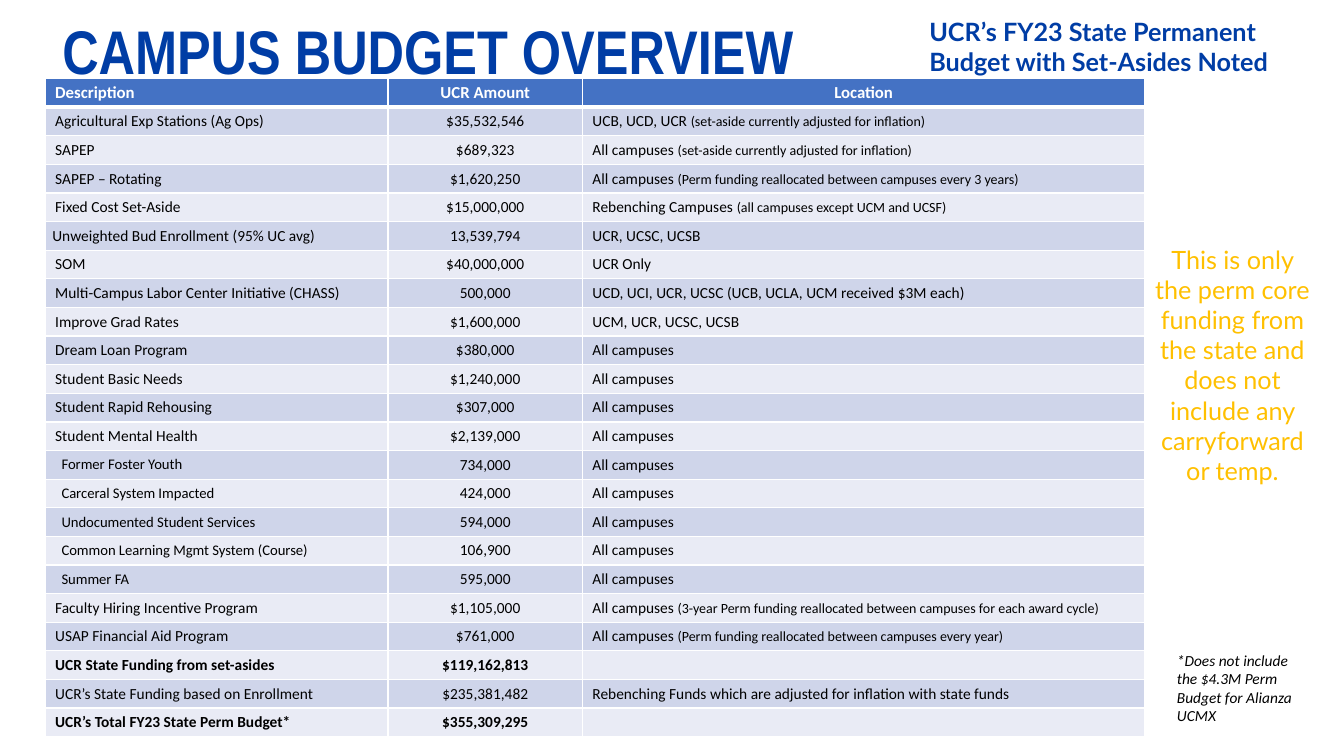
from dataclasses import dataclass

from lxml.etree import SubElement
from pptx import Presentation
from pptx.dml.color import RGBColor
from pptx.enum.text import MSO_ANCHOR, PP_ALIGN
from pptx.oxml.ns import qn
from pptx.util import Cm, Pt


@dataclass(frozen=True)
class Theme:
    """Colours, fonts and type sizes of the slide."""
    blue: str = "003DA5"
    gold: str = "FFC000"
    black: str = "000000"
    white: str = "FFFFFF"
    header: str = "4472C4"
    bands: tuple = ("CFD5EA", "E9EBF5")
    title_font: str = "Arial Narrow"
    accent_font: str = "Lato"
    body_font: str = "Calibri"
    title_size: float = 44
    accent_size: float = 18
    header_size: float = 12
    body_size: float = 11
    detail_size: float = 10.5
    remark_size: float = 10


THEME = Theme()
INDENT, SLIGHT_INDENT, DETAIL_INDENT = 0.25, 0.18, 0.41
COLUMN_WIDTHS = (8.64, 4.9, 14.17)
HEADINGS = ("Description", "UCR Amount", "Location")
ALL = "All campuses"
TOTALS = ("UCR State Funding from set-asides", "UCR’s Total FY23 State Perm Budget*")
SLIGHT = ("Unweighted Bud Enrollment (95% UC avg)",)
DETAILS = (
    "Former Foster Youth",
    "Carceral System Impacted",
    "Undocumented Student Services",
    "Common Learning Mgmt System (Course)",
    "Summer FA",
)
BUDGET = (
    ("Agricultural Exp Stations (Ag Ops)", "$35,532,546", "UCB, UCD, UCR",
     "(set-aside currently adjusted for inflation)"),
    ("SAPEP", "$689,323", ALL, "(set-aside currently adjusted for inflation)"),
    ("SAPEP – Rotating", "$1,620,250", ALL,
     "(Perm funding reallocated between campuses every 3 years)"),
    ("Fixed Cost Set-Aside", "$15,000,000", "Rebenching Campuses",
     "(all campuses except UCM and UCSF)"),
    (SLIGHT[0], "13,539,794", "UCR, UCSC, UCSB", ""),
    ("SOM", "$40,000,000", "UCR Only", ""),
    ("Multi-Campus Labor Center Initiative (CHASS)", "500,000",
     "UCD, UCI, UCR, UCSC (UCB, UCLA, UCM received $3M each)", ""),
    ("Improve Grad Rates", "$1,600,000", "UCM, UCR, UCSC, UCSB", ""),
    ("Dream Loan Program", "$380,000", ALL, ""),
    ("Student Basic Needs", "$1,240,000", ALL, ""),
    ("Student Rapid Rehousing", "$307,000", ALL, ""),
    ("Student Mental Health", "$2,139,000", ALL, ""),
    (DETAILS[0], "734,000", ALL, ""),
    (DETAILS[1], "424,000", ALL, ""),
    (DETAILS[2], "594,000", ALL, ""),
    (DETAILS[3], "106,900", ALL, ""),
    (DETAILS[4], "595,000", ALL, ""),
    ("Faculty Hiring Incentive Program", "$1,105,000", ALL,
     "(3-year Perm funding reallocated between campuses for each award cycle)"),
    ("USAP Financial Aid Program", "$761,000", ALL,
     "(Perm funding reallocated between campuses every year)"),
    (TOTALS[0], "$119,162,813", "", ""),
    ("UCR’s State Funding based on Enrollment", "$235,381,482",
     "Rebenching Funds which are adjusted for inflation with state funds", ""),
    (TOTALS[1], "$355,309,295", "", ""),
)


def style_font(font, name, size, color, bold=False, italic=False):
    """Apply the given type settings to a font."""
    font.name, font.size = name, Pt(size)
    font.bold, font.italic = bold, italic
    font.color.rgb = RGBColor.from_string(color)


def add_text(page, box, text, name, size, color, bold=False, italic=False,
             align=PP_ALIGN.LEFT, inset=True, spacing=None):
    """Place one paragraph of wrapped text in a box given in centimetres."""
    frame = page.shapes.add_textbox(*map(Cm, box)).text_frame
    frame.word_wrap = True
    if not inset:
        frame.margin_left = frame.margin_right = 0
        frame.margin_top = frame.margin_bottom = 0
    para = frame.paragraphs[0]
    para.text, para.alignment, para.line_spacing = text, align, spacing
    style_font(para.font, name, size, color, bold, italic)


def set_borders(cell, bottom_width):
    """Draw white cell borders, with a chosen width at the bottom."""
    properties = cell._tc.get_or_add_tcPr()
    widths = {"a:lnL": 1, "a:lnR": 1, "a:lnT": 1, "a:lnB": bottom_width}
    for tag, width in widths.items():
        line = SubElement(properties, qn(tag), w=str(Pt(width)))
        fill = SubElement(line, qn("a:solidFill"))
        SubElement(fill, qn("a:srgbClr"), val=THEME.white)


def fill_cell(cell, text, fill, size=THEME.body_size, color=THEME.black, bold=False,
              align=PP_ALIGN.LEFT, indent=INDENT, remark="", bottom_width=1):
    """Write and colour one table cell."""
    set_borders(cell, bottom_width)
    cell.fill.solid()
    cell.fill.fore_color.rgb = RGBColor.from_string(fill)
    cell.vertical_anchor = MSO_ANCHOR.MIDDLE
    cell.margin_left, cell.margin_right = Cm(indent), Cm(INDENT)
    cell.margin_top = cell.margin_bottom = Cm(0.05)
    para = cell.text_frame.paragraphs[0]
    para.alignment = align
    style_font(para.font, THEME.body_font, size, color, bold)
    if not text:
        para._p.get_or_add_endParaRPr().set("sz", str(int(size * 100)))
        return
    para.add_run().text = f"{text} " if remark else text
    if remark:
        span = para.add_run()
        span.text, span.font.size = remark, Pt(THEME.remark_size)


def add_budget_table(page, box):
    """Build the budget table with even rows inside the box."""
    left, top, width, height = map(Cm, box)
    count = len(BUDGET) + 1
    table = page.shapes.add_table(count, len(HEADINGS), left, top, width, height).table
    table.first_row = table.horz_banding = False
    for column, column_width in zip(table.columns, COLUMN_WIDTHS):
        column.width = Cm(column_width)
    for row in table.rows:
        row.height = height // count
    for index, heading in enumerate(HEADINGS):
        fill_cell(table.cell(0, index), heading, THEME.header, THEME.header_size,
                  THEME.white, True, PP_ALIGN.CENTER if index else PP_ALIGN.LEFT,
                  bottom_width=3)
    for index, (name, amount, location, remark) in enumerate(BUDGET, 1):
        fill = THEME.bands[(index - 1) % 2]
        bold = name in TOTALS
        detail = name in DETAILS
        indent = DETAIL_INDENT if detail else SLIGHT_INDENT if name in SLIGHT else INDENT
        fill_cell(table.cell(index, 0), name, fill, bold=bold, indent=indent,
                  size=THEME.detail_size if detail else THEME.body_size)
        fill_cell(table.cell(index, 1), amount, fill, bold=bold, align=PP_ALIGN.CENTER)
        fill_cell(table.cell(index, 2), location, fill, remark=remark)


def add_heading(page, box):
    """Place the title and, at its right, the subtitle."""
    left, top, width, height = box
    add_text(page, (left, top, 21.95, height), "CAMPUS BUDGET OVERVIEW",
             THEME.title_font, THEME.title_size, THEME.blue, bold=True, spacing=0.9)
    add_text(page, (left + 22.1, top, width - 22.1, height),
             "UCR’s FY23 State Permanent Budget with Set-Asides Noted",
             THEME.accent_font, THEME.accent_size, THEME.blue, bold=True, inset=False)


def add_side_notes(page, box):
    """Place the highlighted remark and the footnote beside the table."""
    left, top, width, height = box
    add_text(page, (left, top, width, 7.19),
             "This is only the perm core funding from the state and does not "
             "include any carryforward or temp.",
             THEME.accent_font, THEME.accent_size, THEME.gold, align=PP_ALIGN.CENTER)
    add_text(page, (left + 0.56, top + height - 2.13, width - 0.56, 2.13),
             "*Does not include the $4.3M Perm Budget for Alianza UCMX",
             THEME.body_font, THEME.body_size, THEME.black, italic=True)


def main():
    """Build the deck and save it."""
    deck = Presentation()
    deck.slide_width, deck.slide_height = Cm(33.87), Cm(19.05)
    page = deck.slides.add_slide(deck.slide_layouts[6])
    add_heading(page, (1.32, 0.41, 31.47, 1.57))
    add_side_notes(page, (28.85, 6.02, 4.42, 12.39))
    add_budget_table(page, (1.14, 1.98, 27.71, 16.59))
    deck.save("out.pptx")


if __name__ == "__main__":
    main()
